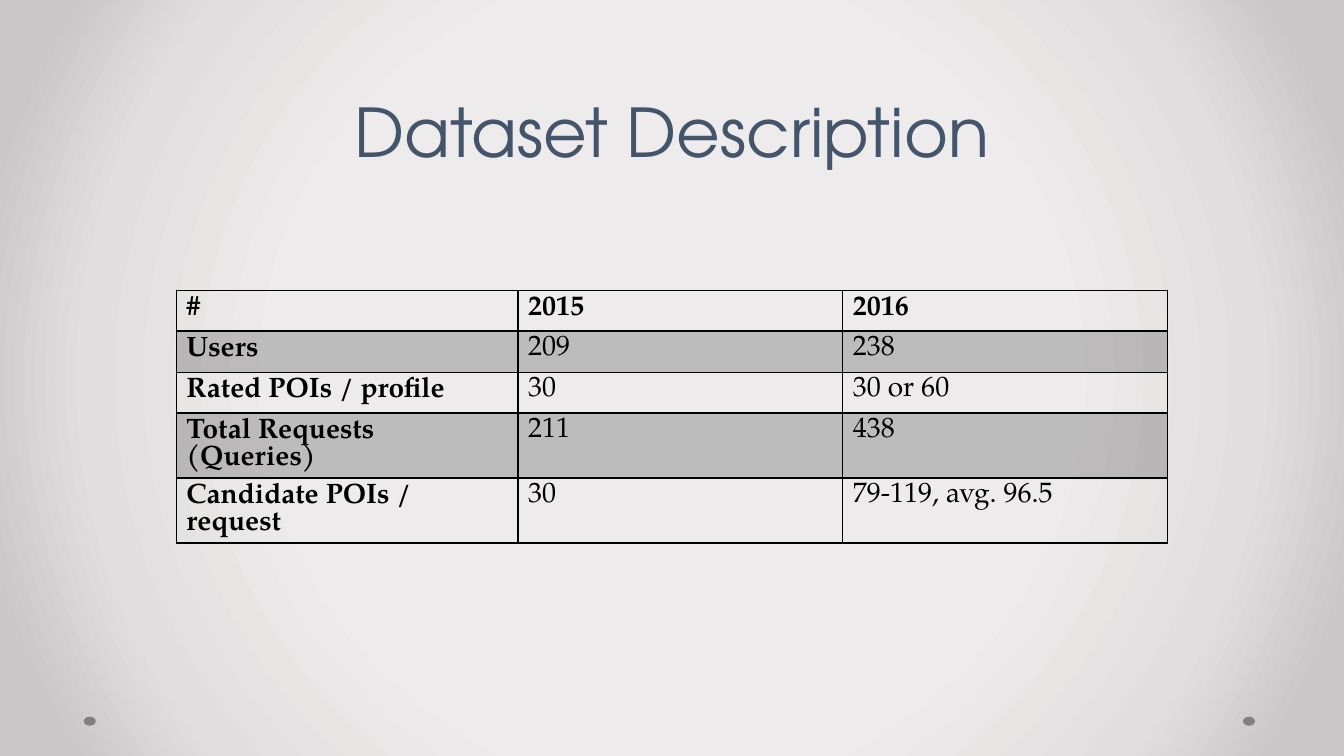
from lxml import etree
from pptx import Presentation
from pptx.dml.color import RGBColor
from pptx.enum.shapes import MSO_SHAPE
from pptx.enum.text import MSO_ANCHOR, PP_ALIGN
from pptx.oxml import parse_xml
from pptx.oxml.ns import nsdecls, qn
from pptx.util import Pt

OVAL = MSO_SHAPE.OVAL
CENTER = PP_ALIGN.CENTER
BOTTOM = MSO_ANCHOR.BOTTOM

COLORS = {
    "title": "44546A",
    "ink": "000000",
    "dot": "808080",
    "center": "EDEBEB",
    "middle": "E0DEDE",
    "edge": "C9C7C7",
}
TITLE_FONT = "TeX Gyre Adventor"
BODY_FONT = "TeX Gyre Pagella"

ROWS = [
    ("#", "2015", "2016"),
    ("Users", "209", "238"),
    ("Rated POIs / profile", "30", "30 or 60"),
    ("Total Requests (Queries)", "211", "438"),
    ("Candidate POIs / request", "30", "79-119, avg. 96.5"),
]


class SlideBuilder:
    """Holds the style and the current slide; lengths are in points."""

    def __init__(self, slide):
        self.slide = slide

    def background(self, stops):
        fill = self.slide.background.fill
        fill.solid()
        solid = self.slide.element.find(".//" + qn("a:solidFill"))
        stop_xml = "".join(
            f'<a:gs pos="{percent * 1000}"><a:srgbClr val="{COLORS[name]}"/></a:gs>'
            for percent, name in stops
        )
        gradient = parse_xml(
            f'<a:gradFill {nsdecls("a")} rotWithShape="1"><a:gsLst>{stop_xml}</a:gsLst>'
            '<a:path path="circle"><a:fillToRect l="50000" t="50000" r="50000" b="50000"/>'
            "</a:path></a:gradFill>"
        )
        solid.getparent().replace(solid, gradient)

    def dot(self, left, top, width, height):
        dot = self.slide.shapes.add_shape(OVAL, Pt(left), Pt(top), Pt(width), Pt(height))
        dot.shadow.inherit = False
        dot.fill.solid()
        dot.fill.fore_color.rgb = RGBColor.from_string(COLORS["dot"])
        dot.line.fill.background()

    def format_text(self, para, font, size, color, spacing, bold=False):
        para.line_spacing = Pt(spacing)
        for span in para.runs:
            span.font.name = font
            span.font.size = Pt(size)
            span.font.bold = bold
            span.font.color.rgb = RGBColor.from_string(COLORS[color])

    def title(self, text, left, top, width, height):
        box = self.slide.shapes.add_textbox(Pt(left), Pt(top), Pt(width), Pt(height))
        frame = box.text_frame
        frame.word_wrap = True
        frame.vertical_anchor = BOTTOM
        frame.text = text
        para = frame.paragraphs[0]
        para.alignment = CENTER
        self.format_text(para, TITLE_FONT, 48, "title", 48)

    def cell_fill(self, cell, shaded):
        if not shaded:
            cell.fill.background()
            return
        cell.fill.solid()
        cell.fill.fore_color.rgb = RGBColor.from_string(COLORS["ink"])
        color = cell.fill._xPr.find(".//" + qn("a:srgbClr"))
        etree.SubElement(color, qn("a:alpha"), val="20000")

    def cell_borders(self, cell, bottom):
        properties = cell._tc.get_or_add_tcPr()
        widths = {"lnL": 1, "lnR": 1, "lnT": 1, "lnB": bottom}
        for index, (side, width) in enumerate(widths.items()):
            border = parse_xml(
                f'<a:{side} {nsdecls("a")} w="{Pt(width)}"><a:solidFill>'
                f'<a:srgbClr val="{COLORS["ink"]}"/></a:solidFill></a:{side}>'
            )
            properties.insert(index, border)

    def table(self, rows, left, top, column_widths, row_height):
        frame = self.slide.shapes.add_table(
            len(rows), len(column_widths), Pt(left), Pt(top),
            Pt(sum(column_widths)), Pt(row_height * len(rows)),
        )
        table = frame.table
        table.first_row = False
        table.horz_banding = False
        for column, width in zip(table.columns, column_widths):
            column.width = Pt(width)
        for row_index, values in enumerate(rows):
            table.rows[row_index].height = Pt(row_height)
            for column_index, value in enumerate(values):
                cell = table.cell(row_index, column_index)
                cell.text_frame.text = value
                bold = row_index == 0 or column_index == 0
                self.format_text(
                    cell.text_frame.paragraphs[0], BODY_FONT, 20, "ink", 19.6, bold
                )
                self.cell_fill(cell, shaded=row_index % 2 == 1)
                self.cell_borders(cell, bottom=2 if row_index == 0 else 1)


def main():
    deck = Presentation()
    deck.slide_width = Pt(960)
    deck.slide_height = Pt(540)
    page = SlideBuilder(deck.slides.add_slide(deck.slide_layouts[6]))

    # Background with its two corner dots
    page.background([(50, "center"), (76, "middle"), (92, "edge")])
    for left in (887.8, 59.8):
        page.dot(left, 511.9, 8.6, 6.5)

    # Title and dataset table
    page.title("Dataset Description", 48, 0, 864, 126)
    page.table(ROWS, 126, 207.4, [244, 232, 232], 29.2)

    deck.save("out.pptx")


if __name__ == "__main__":
    main()
